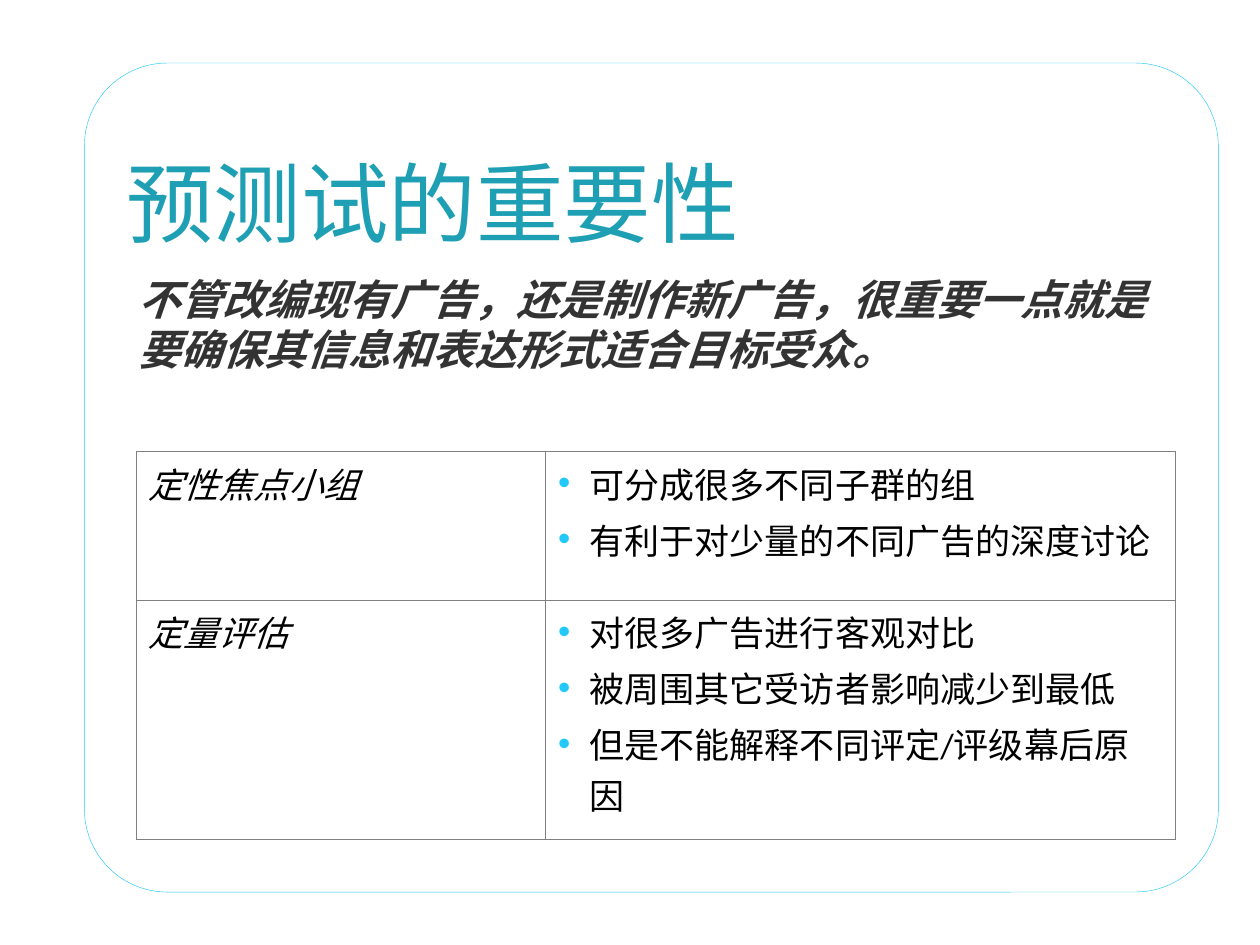
from dataclasses import dataclass

from lxml.etree import SubElement
from pptx import Presentation
from pptx.dml.color import RGBColor as RGB
from pptx.enum.shapes import MSO_SHAPE as SHAPE
from pptx.enum.text import MSO_ANCHOR as ANCHOR, MSO_AUTO_SIZE as FIT, PP_ALIGN as ALIGN
from pptx.oxml.ns import qn
from pptx.util import Inches, Pt


@dataclass(frozen=True)
class Theme:
    font: str = "Calibri"
    title: str = "1E9FB4"
    lead: str = "333333"
    text: str = "000000"
    accent: str = "20C9F8"
    border: str = "7F7F7F"
    title_size: int = 50
    lead_size: int = 24
    cell_size: int = 20
    hairline: float = 0.25


THEME = Theme()
METHODS = [
    ("定性焦点小组", ["可分成很多不同子群的组", "有利于对少量的不同广告的深度讨论"]),
    ("定量评估", ["对很多广告进行客观对比", "被周围其它受访者影响减少到最低",
              "但是不能解释不同评定/评级幕后原因"]),
]
COLUMN_WIDTHS = [3.25, 5]
ROW_HEIGHTS = [1.18, 1.9]


def place(shape, box):
    shape.left, shape.top, shape.width, shape.height = map(Inches, box)


def style_runs(paragraph, size, color, bold=False, italic=False):
    for run in paragraph.runs:
        font = run.font
        font.name, font.size, font.bold, font.italic = THEME.font, Pt(size), bold, italic
        font.color.rgb = RGB.from_string(color)


def add_solid_fill(parent, color):
    SubElement(SubElement(parent, qn("a:solidFill")), qn("a:srgbClr"), val=color)


def add_bullet(paragraph):
    props = paragraph._p.get_or_add_pPr()
    props.set("marL", str(Inches(0.25)))
    props.set("indent", str(-Inches(0.25)))
    SubElement(SubElement(props, qn("a:buClr")), qn("a:srgbClr"), val=THEME.accent)
    SubElement(props, qn("a:buFont"), typeface="Arial")
    SubElement(props, qn("a:buChar"), char="•")


def add_frame(slide, box):
    frame = slide.shapes.add_shape(SHAPE.ROUNDED_RECTANGLE, *map(Inches, box))
    frame.adjustments[0] = 0.1
    frame.shadow.inherit = False
    frame.fill.background()
    frame.line.color.rgb = RGB.from_string(THEME.accent)
    frame.line.width = Pt(THEME.hairline)
    # Send the frame behind the placeholders
    slide.shapes._spTree.insert(2, frame._element)


def fill_title(slide, box):
    title = slide.shapes.title
    place(title, box)
    text = title.text_frame
    text.text = "预测试的重要性"
    text.auto_size = FIT.NONE
    text.vertical_anchor = ANCHOR.BOTTOM
    text.margin_left = text.margin_right = text.margin_bottom = 0
    text.paragraphs[0].alignment = ALIGN.LEFT
    style_runs(text.paragraphs[0], THEME.title_size, THEME.title)


def fill_lead(slide, box):
    body = slide.placeholders[1]
    place(body, box)
    text = body.text_frame
    text.text = "不管改编现有广告，还是制作新广告，很重要一点就是要确保其信息和表达形式适合目标受众。"
    text.auto_size = FIT.NONE
    lead = text.paragraphs[0]
    lead.space_before, lead.space_after = Pt(0), Pt(24)
    props = lead._p.get_or_add_pPr()
    props.set("marL", "0")
    props.set("indent", "0")
    SubElement(props, qn("a:buNone"))
    style_runs(lead, THEME.lead_size, THEME.lead, bold=True, italic=True)


def fill_cell(cell, lines, bulleted):
    props = cell._tc.get_or_add_tcPr()
    for side in ("lnL", "lnR", "lnT", "lnB"):
        border = SubElement(props, qn(f"a:{side}"), w=str(Pt(THEME.hairline)))
        add_solid_fill(border, THEME.border)
    cell.fill.background()
    cell.text_frame.text = "\n".join(lines)
    for paragraph in cell.text_frame.paragraphs:
        if bulleted:
            add_bullet(paragraph)
        paragraph.space_after = Pt(3)
        style_runs(paragraph, THEME.cell_size, THEME.text, italic=not bulleted)


def add_methods_table(slide, box):
    table = slide.shapes.add_table(len(METHODS), 2, *map(Inches, box)).table
    table.first_row = table.horz_banding = False
    for column, width in zip(table.columns, COLUMN_WIDTHS):
        column.width = Inches(width)
    for index, (method, points) in enumerate(METHODS):
        table.rows[index].height = Inches(ROW_HEIGHTS[index])
        fill_cell(table.cell(index, 0), [method], bulleted=False)
        fill_cell(table.cell(index, 1), points, bulleted=True)


def main():
    deck = Presentation()
    deck.slide_width, deck.slide_height = Inches(10), Inches(7.5)
    slide = deck.slides.add_slide(deck.slide_layouts[1])
    add_frame(slide, (0.67, 0.5, 9, 6.58))
    fill_title(slide, (1, 0.77, 8.42, 1.25))
    fill_lead(slide, (1, 2.12, 8.42, 4.8))
    add_methods_table(slide, (1.08, 3.58, sum(COLUMN_WIDTHS), sum(ROW_HEIGHTS)))
    deck.save("out.pptx")


if __name__ == "__main__":
    main()
